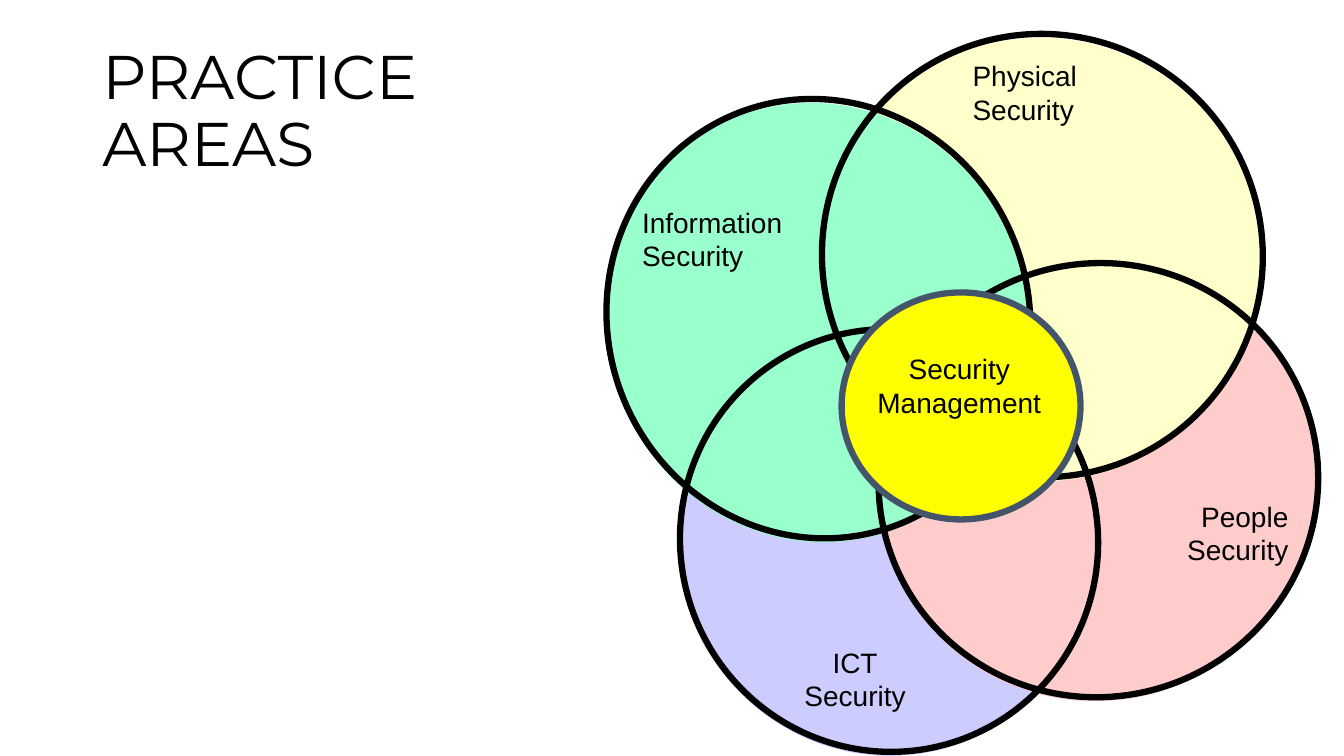
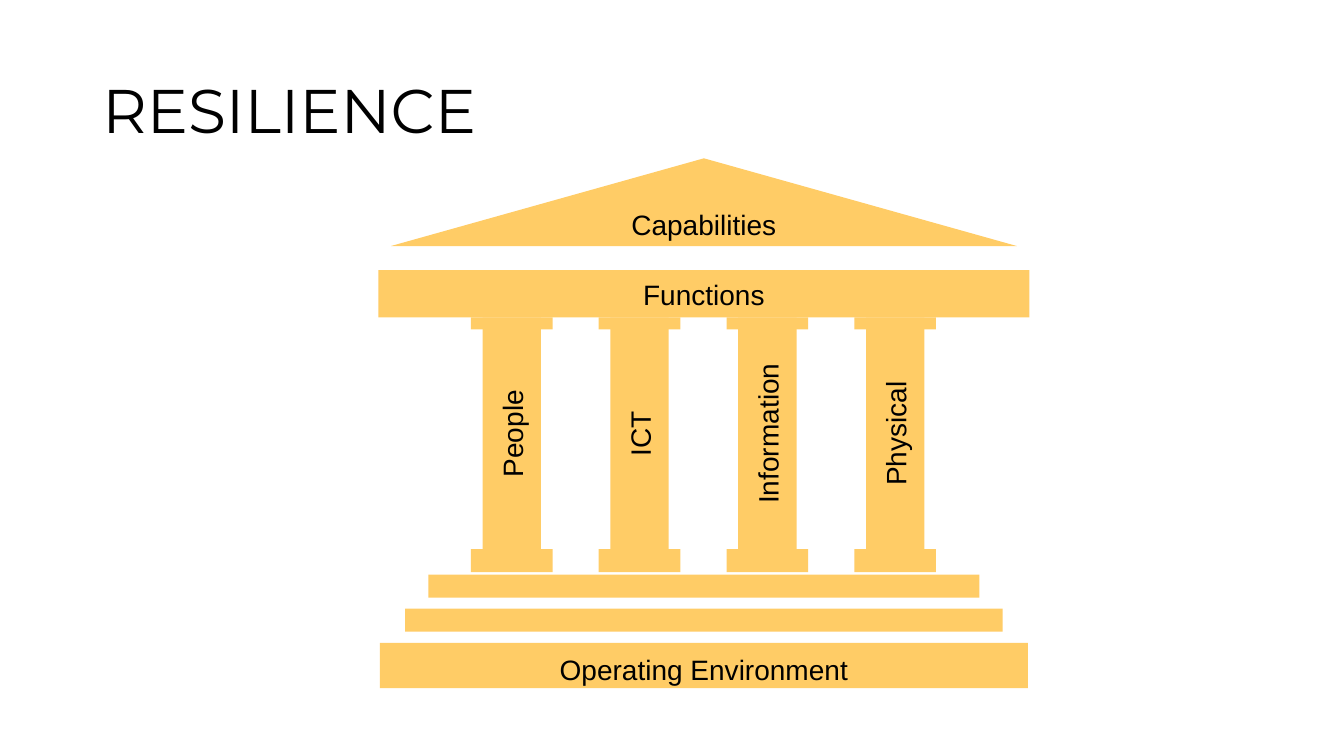
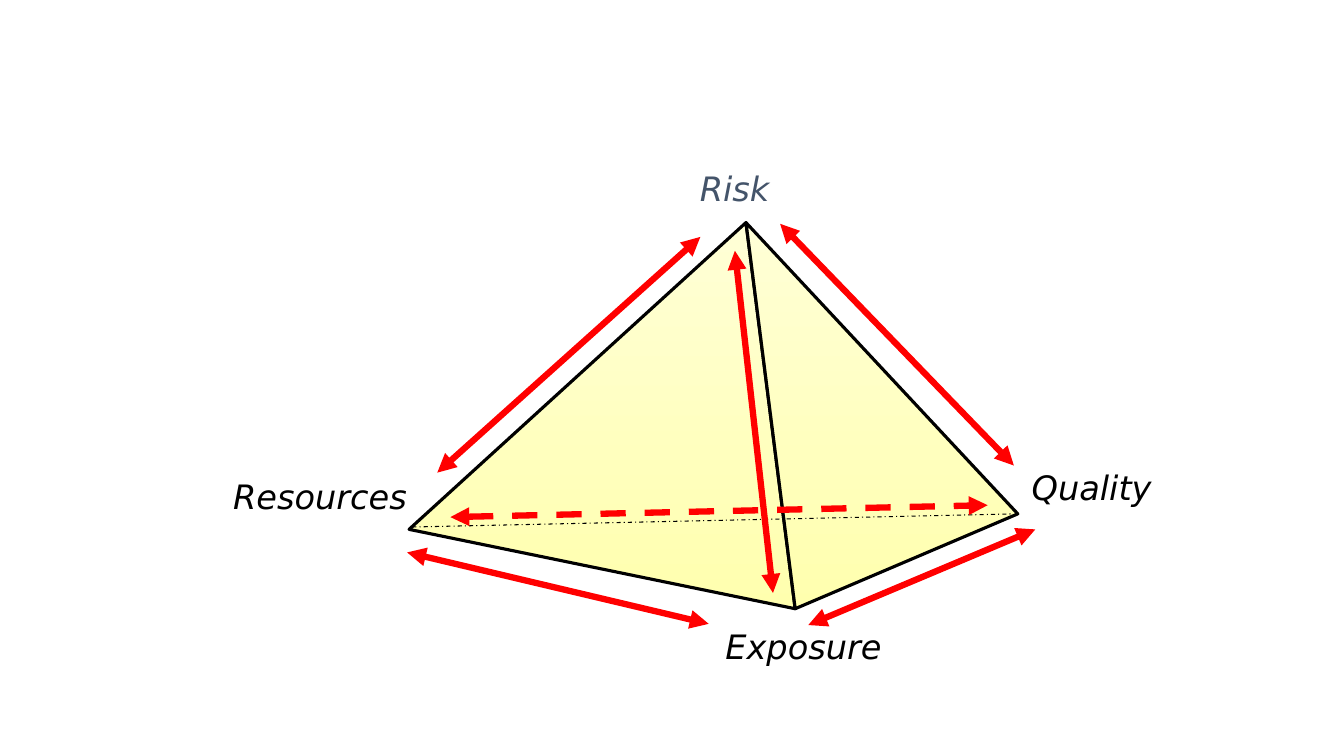
from lxml.etree import SubElement
from pptx import Presentation
from pptx.dml.color import RGBColor
from pptx.enum.dml import MSO_LINE
from pptx.enum.shapes import MSO_CONNECTOR, MSO_SHAPE
from pptx.enum.text import MSO_ANCHOR, PP_ALIGN
from pptx.oxml.ns import qn
from pptx.util import Cm, Pt

BLACK = RGBColor(0x00, 0x00, 0x00)
SLATE = RGBColor(0x44, 0x54, 0x6A)
RED = RGBColor(0xFF, 0x00, 0x00)
YELLOW = RGBColor(0xFF, 0xFF, 0x00)
LAVENDER = RGBColor(0xCC, 0xCC, 0xFF)
PINK = RGBColor(0xFF, 0xCC, 0xCC)
CREAM = RGBColor(0xFF, 0xFF, 0xCC)
MINT = RGBColor(0x99, 0xFF, 0xCC)
LEMON = RGBColor(0xFF, 0xFF, 0x99)
SAND = RGBColor(0xFF, 0xCC, 0x66)

LEFT, CENTER, RIGHT = PP_ALIGN.LEFT, PP_ALIGN.CENTER, PP_ALIGN.RIGHT


class Deck:
    title_font, body_font, note_font = "Montserrat", "Arial", "DejaVu Sans"
    title_size, body_size, note_size = 44, 20, 24
    heavy_line = 4.5

    def __init__(self):
        self.presentation = Presentation()
        self.presentation.slide_width = Cm(33.87)
        self.presentation.slide_height = Cm(19.05)
        self.slide = None

    def new_slide(self, title=None):
        layout = self.presentation.slide_layouts[6]
        self.slide = self.presentation.slides.add_slide(layout)
        if title:
            box = self.label(title, 2.33, 1.01, 29.21, 3.68, LEFT,
                             self.title_font, self.title_size)
            box.text_frame.vertical_anchor = MSO_ANCHOR.MIDDLE
            box.text_frame.paragraphs[0].line_spacing = 0.9

    def set_text(self, shape, text, align, font=None, size=None, color=BLACK, italic=False):
        frame = shape.text_frame
        frame.word_wrap = True
        paragraph = frame.paragraphs[0]
        paragraph.text = text
        paragraph.alignment = align
        for run in paragraph.runs:
            run.font.name = font or self.body_font
            run.font.size = Pt(size or self.body_size)
            run.font.color.rgb = color
            run.font.italic = italic

    def label(self, text, left, top, width, height, align=CENTER, *style):
        box = self.slide.shapes.add_textbox(Cm(left), Cm(top), Cm(width), Cm(height))
        self.set_text(box, text, align, *style)
        return box

    def note(self, text, left, top, width, color=BLACK):
        self.label(text, left, top, width, 1.27, CENTER,
                   self.note_font, self.note_size, color, True)

    def outline(self, shape, color, weight):
        shape.line.color.rgb = color
        shape.line.width = Pt(weight)

    def shape(self, kind, left, top, width, height, fill=None, line=None, text=None, rotation=0):
        shape = self.slide.shapes.add_shape(kind, Cm(left), Cm(top), Cm(width), Cm(height))
        shape.shadow.inherit = False
        shape.rotation = rotation
        if fill is None:
            shape.fill.background()
        else:
            shape.fill.solid()
            shape.fill.fore_color.rgb = fill
        if line is None:
            shape.line.fill.background()
        else:
            self.outline(shape, line, self.heavy_line)
        if text:
            self.set_text(shape, text, CENTER)
            shape.text_frame.vertical_anchor = MSO_ANCHOR.MIDDLE
        return shape

    def face(self, *corners):
        points = [(Cm(x), Cm(y)) for x, y in corners]
        builder = self.slide.shapes.build_freeform(*points[0])
        builder.add_line_segments(points[1:], close=True)
        shape = builder.convert_to_shape()
        shape.shadow.inherit = False
        shape.fill.gradient()
        shape.fill.gradient_angle = 270
        for stop, color in zip(shape.fill.gradient_stops, (CREAM, LEMON)):
            stop.color.rgb = color
        for color_element in shape.element.spPr.iter(qn("a:srgbClr")):
            SubElement(color_element, qn("a:alpha"), val="79000")
        self.outline(shape, BLACK, 2.25)

    def line(self, start, end, color, weight, dash=None):
        connector = self.slide.shapes.add_connector(
            MSO_CONNECTOR.STRAIGHT, *(Cm(value) for value in start + end))
        self.outline(connector, color, weight)
        if dash:
            connector.line.dash_style = dash
        SubElement(connector.element.spPr, qn("a:effectLst"))
        return connector

    def double_arrow(self, start, end, dash=None):
        connector = self.line(start, end, RED, self.heavy_line, dash)
        line_element = connector.element.spPr.find(qn("a:ln"))
        for tag in ("a:headEnd", "a:tailEnd"):
            SubElement(line_element, qn(tag), type="triangle")


def practice_areas(deck):
    deck.new_slide("PRACTICE\nAREAS")
    circles = [
        (17.07, 8.36, 10.67, 10.52, LAVENDER),
        (22.22, 6.55, 10.92, 11.1, PINK),
        (20.68, 0.89, 11.18, 11.1, CREAM),
        (15.06, 2.72, 11.13, 10.62, MINT),
    ]
    for left, top, width, height, color in circles:
        deck.shape(MSO_SHAPE.OVAL, left - 0.03, top + 0.1, width, height, color, rotation=70)
    for left, top, width, height, _ in circles:
        deck.shape(MSO_SHAPE.OVAL, left, top, width, height, line=BLACK, rotation=70)
    deck.shape(MSO_SHAPE.OVAL, 21.21, 7.37, 6.02, 5.72, YELLOW, SLATE)
    for text, left, top, width, align in [
        ("Physical\nSecurity", 24.26, 1.35, 3.81, LEFT),
        ("People\nSecurity", 29.01, 12.45, 3.71, RIGHT),
        ("ICT\nSecurity", 19.58, 16.13, 3.94, CENTER),
        ("Information\nSecurity", 15.93, 5.05, 5.11, LEFT),
        ("Security\nManagement", 21.29, 8.74, 5.77, CENTER),
    ]:
        deck.label(text, left, top, width, 2.36, align)


def resilience(deck):
    deck.new_slide("RESILIENCE")
    axis = 17.74

    def block(center, top, width, height, text=None, kind=MSO_SHAPE.RECTANGLE, rotation=0):
        deck.shape(kind, center - width / 2, top, width, height, SAND,
                   text=text, rotation=rotation)

    block(axis, 3.99, 15.77, 2.21, "Capabilities", MSO_SHAPE.ISOSCELES_TRIANGLE)
    block(axis, 6.81, 16.41, 1.19, "Functions")
    for index, (width, height) in enumerate([(13.89, 0.58), (15.06, 0.58), (16.33, 1.14)]):
        block(axis, 14.48 + index * 0.86, width, height)
    for index, pillar in enumerate(["People", "ICT", "Information", "Physical"]):
        center = 12.9 + index * 3.22
        block(center, 10.19, 5.84, 1.47, pillar, rotation=270)
        block(center, 8, 2.06, 0.3)
        block(center, 13.84, 2.06, 0.58)
    deck.label("Operating Environment", axis - 6.53, 16.31, 13.06, 1.09)


def risk_pyramid(deck):
    deck.new_slide()
    risk, resources = (18.8, 5.61), (10.31, 13.34)
    exposure, quality = (20.04, 15.34), (25.65, 12.95)
    deck.face(risk, resources, exposure)
    deck.face(risk, quality, exposure)
    deck.line((10.39, 13.28), (25.53, 12.95), BLACK, 0.75, MSO_LINE.DASH_DOT)
    deck.double_arrow((11.35, 13.03), (24.89, 12.73), MSO_LINE.DASH)
    deck.note("Risk", 16.76, 4.11, 3.51, SLATE)
    deck.note("Exposure", 17.53, 15.65, 5.44)
    deck.note("Resources", 5.08, 11.86, 5.97)
    deck.note("Quality", 25.02, 11.63, 4.98)
    for start, end in [
        ((10.26, 13.92), (17.86, 15.72)),
        ((20.37, 15.75), (26.09, 13.34)),
        ((11.02, 11.91), (17.65, 5.97)),
        ((25.55, 11.73), (19.66, 5.64)),
        ((19.48, 14.94), (18.52, 6.32)),
    ]:
        deck.double_arrow(start, end)


def main():
    deck = Deck()
    practice_areas(deck)
    resilience(deck)
    risk_pyramid(deck)
    deck.presentation.save("out.pptx")


if __name__ == "__main__":
    main()
